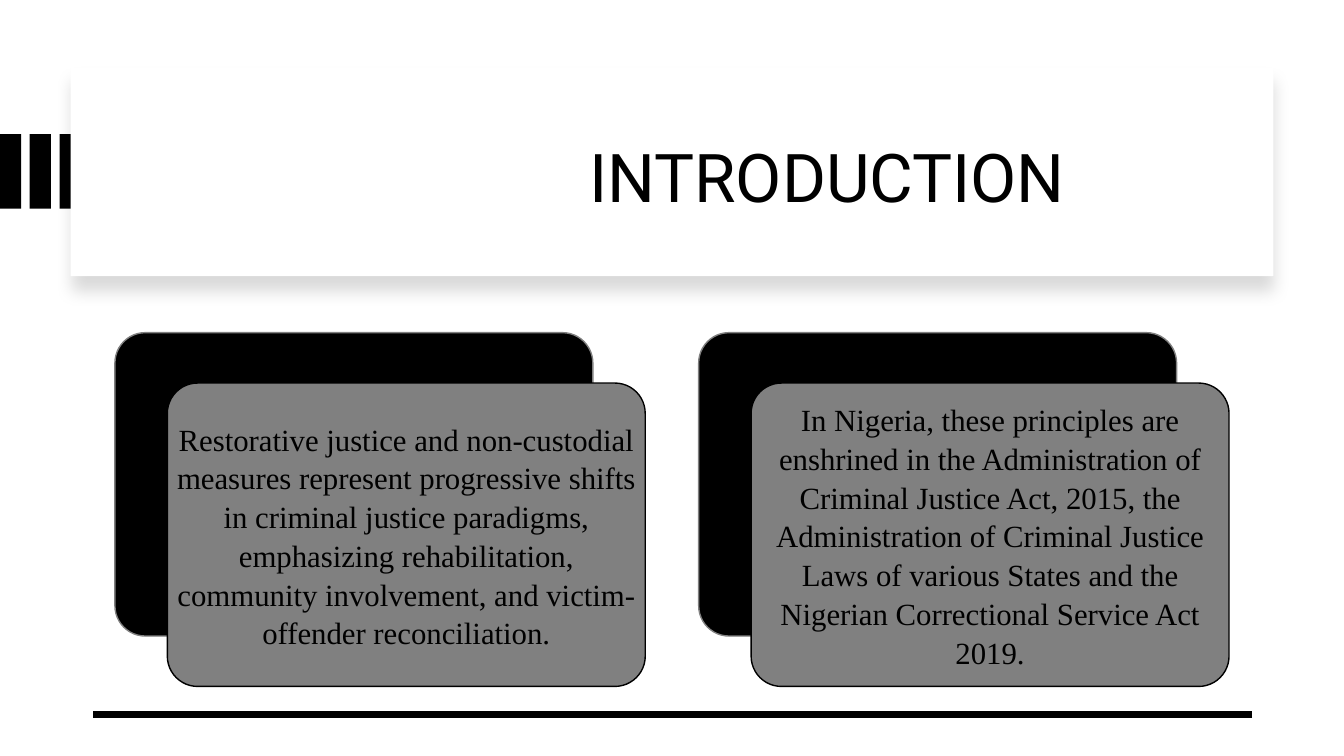
from dataclasses import dataclass

from lxml.etree import SubElement
from pptx import Presentation
from pptx.dml.color import RGBColor as Rgb
from pptx.enum.shapes import MSO_CONNECTOR as Connector, MSO_SHAPE as Shape
from pptx.enum.text import MSO_ANCHOR as Anchor, PP_ALIGN as Align
from pptx.oxml.ns import qn
from pptx.util import Inches, Pt


@dataclass(frozen=True)
class Theme:
    black: Rgb = Rgb(0, 0, 0)
    gray: Rgb = Rgb(0x80, 0x80, 0x80)
    white: Rgb = Rgb(255, 255, 255)
    title_font: str = "Roboto"
    body_font: str = "Times New Roman"
    title_size: Pt = Pt(48)
    body_size: Pt = Pt(22)


theme = Theme()
deck = Presentation()
deck.slide_width, deck.slide_height = Inches(13.33), Inches(7.5)
page = deck.slides.add_slide(deck.slide_layouts[5])


def add_box(kind, left, top, width, height, fill, line=None):
    """Add a filled shape, lengths in inches, outlined only when line is given."""
    box = page.shapes.add_shape(kind, *map(Inches, (left, top, width, height)))
    box.shadow.inherit = False
    box.fill.solid()
    box.fill.fore_color.rgb = fill
    if line is None:
        box.line.fill.background()
    else:
        box.line.color.rgb = line
        box.line.width = Pt(1)
    return box


def style_text(para, font, size):
    para.alignment = Align.CENTER
    for span in para.runs:
        span.font.name = font
        span.font.size = size
        span.font.color.rgb = theme.black


# Stripes running in from the left edge, under the title panel
STRIPE_PITCH = 0.295
for column in range(3):
    add_box(Shape.RECTANGLE, column * STRIPE_PITCH, 1.33, 0.21, 0.74, theme.black)

# Title panel with a soft shadow below it
panel = add_box(Shape.RECTANGLE, 0.7, 0.67, 11.93, 2.07, theme.white)
effects = panel._element.spPr.find(qn("a:effectLst"))
shadow = SubElement(effects, qn("a:outerShdw"), blurRad=str(Pt(11)), dist=str(Pt(10)),
                    dir=str(90 * 60000), algn="t", rotWithShape="0")
shadow_color = SubElement(shadow, qn("a:srgbClr"), val=str(theme.black))
SubElement(shadow_color, qn("a:alpha"), val="15000")

title = page.shapes.title
panel._element.addnext(title._element)
title.left, title.top, title.width, title.height = map(Inches, (1.14, 0.89, 11.13, 1.7))
title.text_frame.text = "INTRODUCTION"
title.text_frame.vertical_anchor = Anchor.MIDDLE
title.text_frame.margin_left = Inches(3.1)  # moves the centred heading to the right
style_text(title.text_frame.paragraphs[0], theme.title_font, theme.title_size)

# Rule along the bottom
rule = page.shapes.add_connector(
    Connector.STRAIGHT, *map(Inches, (12.42, 7.09, 0.92, 7.09)))
rule.line.color.rgb = theme.black
rule.line.width = Pt(4.5)
SubElement(rule._element.spPr, qn("a:effectLst"))

# Two cards, each a gray front sheet offset from a black back sheet
CARD_LEFT, CARD_TOP, CARD_PITCH = 1.14, 3.3, 5.79
CARD_SIZE = (4.74, 3.01)
OFFSET_X, OFFSET_Y = 0.52, 0.5
statements = [
    "Restorative justice and non-custodial measures represent progressive shifts in "
    "criminal justice paradigms, emphasizing rehabilitation, community involvement, "
    "and victim-offender reconciliation.",
    "In Nigeria, these principles are enshrined in the Administration of Criminal "
    "Justice Act, 2015, the Administration of Criminal Justice Laws of various States "
    "and the Nigerian Correctional Service Act 2019.",
]
for column, statement in enumerate(statements):
    left = CARD_LEFT + column * CARD_PITCH
    back = add_box(Shape.ROUNDED_RECTANGLE, left, CARD_TOP, *CARD_SIZE,
                   theme.black, theme.gray)
    front = add_box(Shape.ROUNDED_RECTANGLE, left + OFFSET_X, CARD_TOP + OFFSET_Y,
                    *CARD_SIZE, theme.gray, theme.black)
    for sheet in (back, front):
        sheet.adjustments[0] = 0.1

    frame = front.text_frame
    frame.word_wrap = True
    frame.vertical_anchor = Anchor.MIDDLE
    frame.margin_left = frame.margin_right = frame.margin_top = frame.margin_bottom = 0
    frame.text = statement
    para = frame.paragraphs[0]
    para.line_spacing = 1.05
    style_text(para, theme.body_font, theme.body_size)

deck.save("out.pptx")
